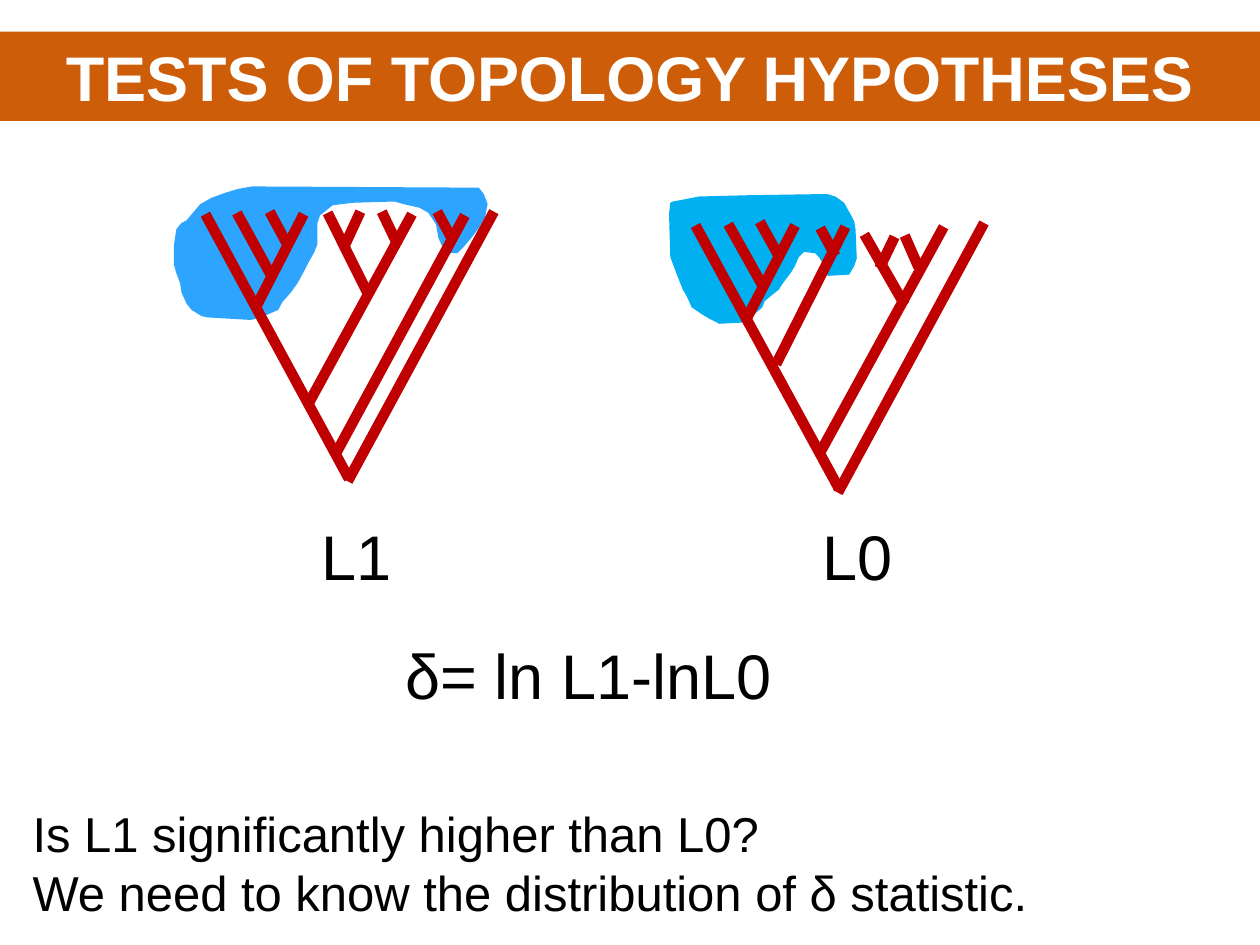
from pptx import Presentation
from pptx.dml.color import RGBColor
from pptx.enum.shapes import MSO_CONNECTOR
from pptx.enum.text import MSO_ANCHOR, MSO_AUTO_SIZE, PP_ALIGN
from pptx.oxml.ns import qn
from pptx.util import Inches, Pt
from lxml import etree

STRAIGHT = MSO_CONNECTOR.STRAIGHT
MIDDLE, TOP = MSO_ANCHOR.MIDDLE, MSO_ANCHOR.TOP
CENTER = PP_ALIGN.CENTER
NO_FIT, GROW = MSO_AUTO_SIZE.NONE, MSO_AUTO_SIZE.SHAPE_TO_FIT_TEXT

THEME = {
    "font": "Arial", "big": Pt(36), "body": Pt(28), "branch": Pt(6),
    "banner": RGBColor(0xCD, 0x5D, 0x09), "white": RGBColor(255, 255, 255),
    "text": RGBColor(0, 0, 0), "red": RGBColor(0xC0, 0, 0),
    "blue": RGBColor(0x2D, 0xA5, 0xFF), "cyan": RGBColor(0, 0xB0, 0xF0),
}

prs = Presentation()
prs.slide_width, prs.slide_height = Inches(10), Inches(7.5)
COLS = 100  # square grid: 100 columns by 75 rows
CELL = prs.slide_width // COLS
s = prs.slides.add_slide(prs.slide_layouts[5])


def grid(*cells):
    return [round(c * CELL) for c in cells]


def add_run(p, text, size, color, bold=False):
    r = p.add_run()
    r.text = text
    r.font.name, r.font.size, r.font.bold = THEME["font"], size, bold
    r.font.color.rgb = color


# Title banner
sp = s.shapes.title
sp.left, sp.top, sp.width, sp.height = grid(0, 2.5, COLS, 7.1)
sp.fill.solid()
sp.fill.fore_color.rgb = THEME["banner"]
tf = sp.text_frame
tf.auto_size, tf.vertical_anchor, tf.word_wrap = NO_FIT, MIDDLE, True
p = tf.paragraphs[0]
p.alignment = CENTER
add_run(p, "TESTS OF TOPOLOGY HYPOTHESES", THEME["big"], THEME["white"], True)

# Shaded clades, as outline points in grid cells
clades = [
    ("cyan", [
        (53.2, 16.1), (53.1, 17), (53.2, 20.4), (53.5, 21.2), (53.8, 22),
        (54.2, 23), (54.5, 23.5), (54.9, 24.4), (55.8, 25), (56.3, 25.3),
        (57.1, 25.7), (59, 25.6), (59.7, 25.1), (60.5, 24.4), (60.7, 23.9),
        (61.3, 23.4), (61.8, 23), (62.2, 22.4), (62.8, 21.6), (63.1, 21.1),
        (63.4, 20.4), (63.8, 20), (64.7, 20.1), (65, 20.4), (65.4, 21.1),
        (65.7, 21.9), (67.4, 21.8), (67.8, 21.1), (68, 20.5), (67.9, 18.2),
        (67.8, 17.6), (67.5, 17), (67, 16.1), (66.3, 15.6), (65.6, 15.4),
        (59.3, 15.5), (55.5, 15.6), (53.4, 16)]),
    ("blue", [
        (14.8, 17.5), (15.9, 16.2), (16.8, 15.7), (17.9, 15.3), (18.9, 15),
        (20, 14.8), (38, 14.9), (38.4, 15.4), (38.7, 16.2), (38.5, 17.2),
        (38, 18.1), (37.4, 18.9), (36.8, 19.6), (36.3, 20.1), (35.6, 20.1),
        (35.2, 19.8), (34.8, 18.9), (34.6, 17.8), (34, 16.9), (33.3, 16.5),
        (32, 16.2), (31.3, 16), (28, 16.1), (26.4, 16.3), (25.4, 17.1),
        (25.2, 17.7), (25.2, 19.4), (24.9, 20.1), (24.4, 21), (24.1, 21.6),
        (23.6, 22.5), (23.1, 23.2), (22.4, 24), (22.1, 24.6), (20.7, 25.2),
        (19.9, 25.4), (16.5, 25.2), (16, 25.1), (15.2, 24.6), (14.8, 24.1),
        (14.4, 23.2), (14.3, 22.5), (14, 21.7), (13.8, 21), (13.8, 19.5),
        (14, 18.2), (14.4, 17.7)]),
]
for color, cells in clades:
    points = [grid(*c) for c in cells]
    fb = s.shapes.build_freeform(*points[0])
    fb.add_line_segments(points[1:], close=True)
    sp = fb.convert_to_shape()
    sp.shadow.inherit = False
    sp.fill.solid()
    sp.fill.fore_color.rgb = THEME[color]
    sp.line.fill.background()

# Trees: each branch runs from its tip down to its node
trees = [
    [(16.3, 17, 27.7, 38), (39.2, 16.8, 27.6, 38.2), (36.9, 17.1, 26.6, 36.1),
     (32.7, 17, 24.5, 32), (24.1, 17, 20.3, 24.4), (18.8, 16.9, 21.6, 22),
     (21.4, 16.8, 22.8, 19.4), (26, 16.9, 29.2, 23.3), (30.3, 16.8, 31.5, 19.3),
     (34.7, 16.8, 35.9, 19), (28.6, 16.8, 27.4, 19.4)],
    [(55.2, 17.9, 66.6, 38.8), (78.1, 17.7, 66.5, 39.1), (67.1, 18, 61.6, 28.9),
     (74.9, 18, 65.1, 35.9), (63.1, 17.9, 59.3, 25.2), (57.8, 17.8, 60.6, 22.8),
     (60.3, 17.6, 61.8, 20.3), (68.6, 18.6, 71.8, 24.2), (71.8, 18.7, 72.9, 21.2),
     (65.1, 18.1, 66.3, 20.3), (71, 18.8, 69.8, 21.3)],
]
for branches in trees:
    tree = s.shapes.add_group_shape()
    for branch in branches:
        ln = tree.shapes.add_connector(STRAIGHT, *grid(*branch))
        ln.line.color.rgb, ln.line.width = THEME["red"], THEME["branch"]
        etree.SubElement(ln._element.spPr, qn("a:effectLst"))

# Tree labels, statistic and question
texts = [
    ((24.5, 40.6, 7.6, 7.1), "big", False, ["L1"]),
    ((64.3, 40.6, 7.6, 7.1), "big", False, ["L0"]),
    ((31.2, 50, 31.3, 7.1), "big", False, ["δ= ln L1-lnL0"]),
    ((1.6, 63.3, 99.2, 10.4), "body", True,
     ["Is L1 significantly higher than L0?",
      "We need to know the distribution of δ statistic."]),
]
for box, size, wrap, lines in texts:
    tf = s.shapes.add_textbox(*grid(*box)).text_frame
    tf.word_wrap, tf.auto_size, tf.vertical_anchor = wrap, GROW, TOP
    p = tf.paragraphs[0]
    for i, line in enumerate(lines):
        if i:
            p.add_line_break()
        add_run(p, line, THEME[size], THEME["text"])

prs.save("out.pptx")
